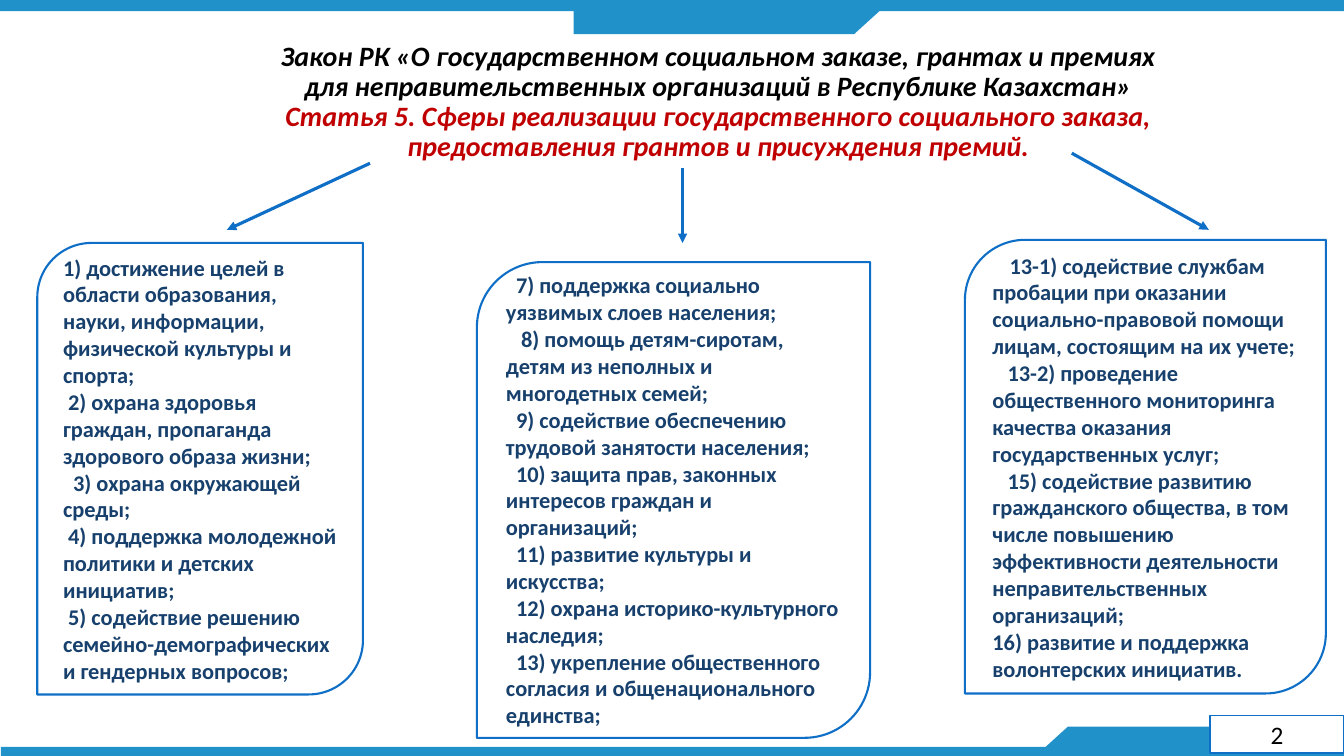
from lxml import etree
from pptx import Presentation
from pptx.dml.color import RGBColor
from pptx.enum.shapes import MSO_CONNECTOR, MSO_SHAPE as Shape
from pptx.enum.text import MSO_ANCHOR, PP_ALIGN as Align
from pptx.oxml.ns import qn
from pptx.util import Inches, Pt

BAND = RGBColor(0x21, 0x91, 0xC9)
OUTLINE = RGBColor(0x0F, 0x6F, 0xC6)
NAVY = RGBColor(0x17, 0x40, 0x6D)
RED = RGBColor(0xC0, 0x00, 0x00)
BLACK = RGBColor(0x00, 0x00, 0x00)
WHITE = RGBColor(0xFF, 0xFF, 0xFF)

LAW = ("Закон РК «О государственном социальном заказе, грантах и премиях "
       "для неправительственных организаций в Республике Казахстан»")
ARTICLE = ("Статья 5. Сферы реализации государственного социального заказа, "
           "предоставления грантов и присуждения премий.")

SPHERES = [
    ((0.37, 2.41, 3.23, 4.48), [
        (0, "1) достижение целей в области образования, науки, информации, физической культуры и спорта;"),
        (0.05, "2) охрана здоровья граждан, пропаганда здорового образа жизни;"),
        (0.1, "3) охрана окружающей среды;"),
        (0.05, "4) поддержка молодежной политики и детских инициатив;"),
        (0.05, "5) содействие решению семейно-демографических и гендерных вопросов;"),
    ]),
    ((4.73, 2.6, 3.9, 4.72), [
        (0.1, "7) поддержка социально уязвимых слоев населения;"),
        (0.15, "8) помощь детям-сиротам, детям из неполных и многодетных семей;"),
        (0.1, "9) содействие обеспечению трудовой занятости населения;"),
        (0.1, "10) защита прав, законных интересов граждан и организаций;"),
        (0.1, "11) развитие культуры и искусства;"),
        (0.1, "12) охрана историко-культурного наследия;"),
        (0.1, "13) укрепление общественного согласия и общенационального единства;"),
    ]),
    ((9.57, 2.38, 3.58, 4.5), [
        (0.17, "13-1) содействие службам пробации при оказании социально-правовой помощи лицам, состоящим на их учете;"),
        (0.15, "13-2) проведение общественного мониторинга качества оказания государственных услуг;"),
        (0.15, "15) содействие развитию гражданского общества, в том числе повышению эффективности "
               "деятельности неправительственных организаций;"),
        (0, "16) развитие и поддержка волонтерских инициатив."),
    ]),
]

ARROWS = [
    ((3.67, 1.62), (2.25, 2.28)),
    ((6.77, 1.67), (6.77, 2.41)),
    ((10.63, 1.52), (11.99, 2.28)),
]


class SlideBuilder:
    typeface = "Calibri"

    def __init__(self, slide):
        self.slide = slide

    def set_font(self, font, size, color=None, bold=False, italic=False):
        font.name = self.typeface
        font.size = Pt(size)
        font.bold = bold
        font.italic = italic
        if color is not None:
            font.color.rgb = color

    def block(self, kind, place, fill, line_width=0, rotation=0):
        block = self.slide.shapes.add_shape(kind, *map(Inches, place))
        block.shadow.inherit = False
        block.rotation = rotation
        block.fill.solid()
        block.fill.fore_color.rgb = fill
        if line_width:
            block.line.color.rgb = OUTLINE
            block.line.width = Pt(line_width)
        else:
            block.line.fill.background()
        return block

    def title(self, place, law, article):
        frame = self.slide.shapes.add_textbox(*map(Inches, place)).text_frame
        frame.word_wrap = True
        frame.vertical_anchor = MSO_ANCHOR.MIDDLE
        paragraph = frame.paragraphs[0]
        paragraph.alignment = Align.CENTER
        paragraph.line_spacing = 0.9
        self.set_font(paragraph.font, 20, bold=True, italic=True)
        law_run = paragraph.add_run()
        law_run.text = law
        law_run.font.color.rgb = BLACK
        paragraph.add_line_break()
        article_run = paragraph.add_run()
        article_run.text = article
        article_run.font.color.rgb = RED

    def sphere_list(self, place, items):
        frame = self.block(Shape.ROUND_2_DIAG_RECTANGLE, place, WHITE, 1.5).text_frame
        frame.word_wrap = True
        frame.vertical_anchor = MSO_ANCHOR.MIDDLE
        for index, (indent, text) in enumerate(items):
            paragraph = frame.add_paragraph() if index else frame.paragraphs[0]
            paragraph.text = text
            paragraph.alignment = Align.LEFT
            properties = paragraph._p.get_or_add_pPr()
            properties.set("marL", "0")
            properties.set("indent", str(Inches(indent)))
            self.set_font(paragraph.font, 16, NAVY, bold=True)

    def arrow(self, start, end):
        arrow = self.slide.shapes.add_connector(
            MSO_CONNECTOR.STRAIGHT, *map(Inches, start + end))
        arrow.line.color.rgb = OUTLINE
        arrow.line.width = Pt(2.25)
        etree.SubElement(arrow.line._get_or_add_ln(), qn("a:tailEnd"), type="triangle")
        etree.SubElement(arrow._element.spPr, qn("a:effectLst"))

    def page_number(self, place, number):
        frame = self.block(Shape.RECTANGLE, place, WHITE, 1).text_frame
        frame.vertical_anchor = MSO_ANCHOR.MIDDLE
        paragraph = frame.paragraphs[0]
        paragraph.text = number
        paragraph.alignment = Align.CENTER
        self.set_font(paragraph.font, 18, BLACK)


def main():
    deck = Presentation()
    deck.slide_width = Inches(13.33)
    deck.slide_height = Inches(7.5)
    builder = SlideBuilder(deck.slides.add_slide(deck.slide_layouts[6]))

    for place in [(0, 0, 13.33, 0.11), (0.01, 7.41, 13.33, 0.11),
                  (5.69, 0.04, 2.78, 0.3), (10.59, 7.21, 2.78, 0.3)]:
        builder.block(Shape.RECTANGLE, place, BAND)
    for left, top, rotation in [(8.14, 0.04, 0), (10.26, 7.21, 180)]:
        builder.block(Shape.FLOWCHART_MERGE, (left, top, 0.66, 0.3), BAND, rotation=rotation)

    builder.title((2.67, 0.37, 8.91, 1.29), LAW, ARTICLE)
    for place, items in SPHERES:
        builder.sphere_list(place, items)
    for start, end in ARROWS:
        builder.arrow(start, end)
    builder.page_number((12, 7.1, 1.33, 0.37), "2")

    deck.save("out.pptx")


if __name__ == "__main__":
    main()
